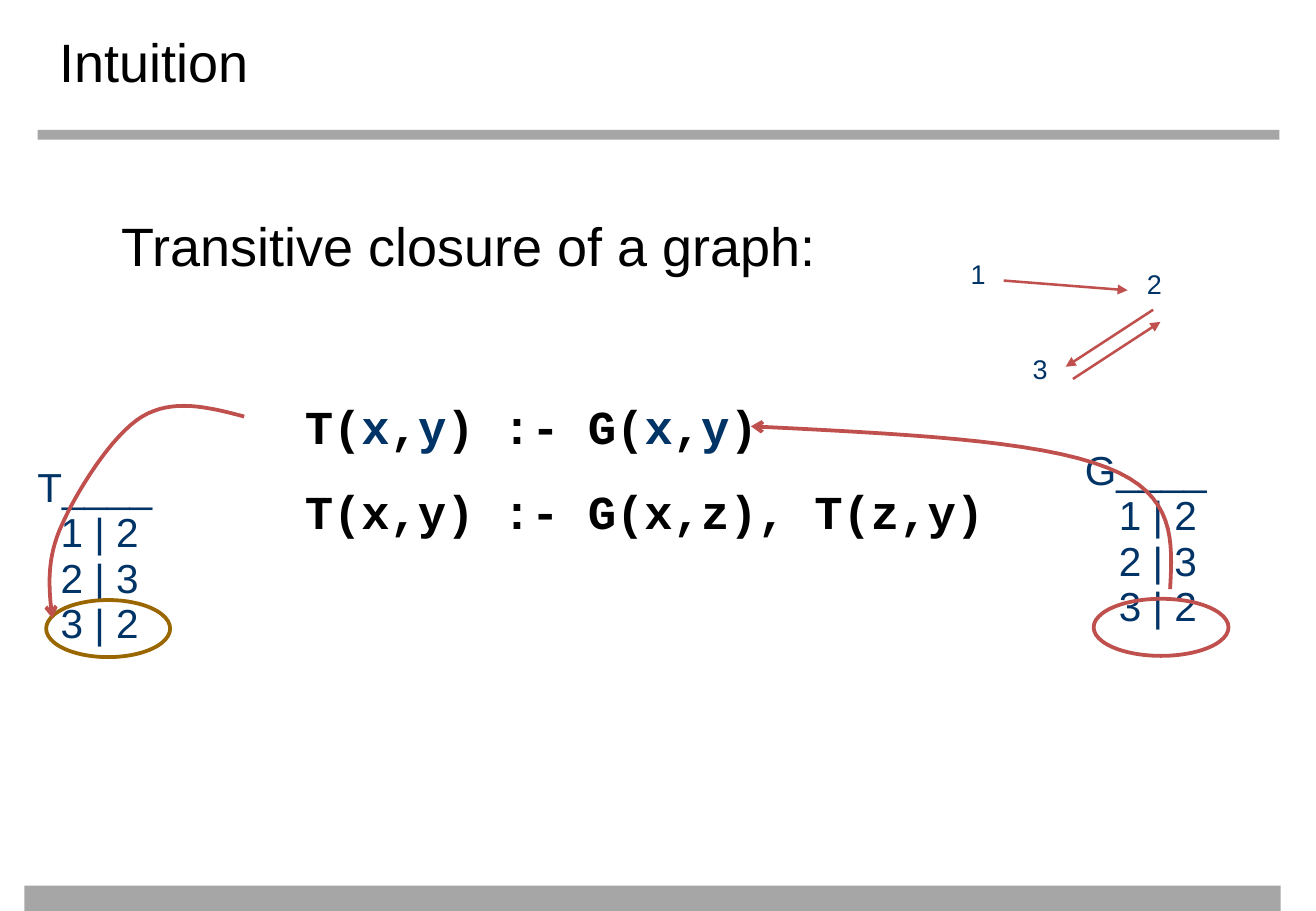
from lxml import etree
from pptx import Presentation
from pptx.dml.color import RGBColor
from pptx.enum.shapes import MSO_CONNECTOR as Conn, MSO_SHAPE as Shape
from pptx.enum.text import MSO_ANCHOR as Anchor
from pptx.oxml.ns import qn
from pptx.util import Inches, Pt

COLORS = {"text": "000000", "navy": "003366", "red": "C0504D",
          "gold": "996600", "gray": "A6A6A6"}


def color(name):
    return RGBColor.from_string(COLORS[name])


def style(run, size, tint="text", face="Arial", bold=False):
    font = run.font
    font.size, font.name, font.bold = Pt(size), face, bold
    font.color.rgb = color(tint)


def add_text(slide, box, lines, size, tint="text", wrap=True):
    frame = slide.shapes.add_textbox(*map(Inches, box)).text_frame
    frame.word_wrap = wrap
    frame.text = "\n".join(lines)
    for para in frame.paragraphs:
        for run in para.runs:
            style(run, size, tint)
    return frame


def set_line(shape, tint, width, tip=None):
    line = shape.line
    line.color.rgb, line.width = color(tint), Pt(width)
    if tip:
        etree.SubElement(line._get_or_add_ln(), qn("a:tailEnd"), type=tip)


def add_bar(slide, box):
    bar = slide.shapes.add_shape(Shape.RECTANGLE, *map(Inches, box))
    bar.shadow.inherit = False
    bar.fill.solid()
    bar.fill.fore_color.rgb = color("gray")
    bar.line.fill.background()


def add_ring(slide, box, tint):
    ring = slide.shapes.add_shape(Shape.OVAL, *map(Inches, box))
    ring.shadow.inherit = False
    ring.fill.background()
    set_line(ring, tint, 2.25)


def add_arrow(slide, start, end):
    arrow = slide.shapes.add_connector(Conn.STRAIGHT, *map(Inches, start + end))
    set_line(arrow, "red", 1.5, "triangle")
    etree.SubElement(arrow._element.spPr, qn("a:effectLst"))


def add_curve(slide, knots, steps=16):
    """Draw a chain of cubic curves; each takes three more knots."""
    dots = []
    for i in range(0, len(knots) - 1, 3):
        for k in range(1, steps + 1):
            t = k / steps
            mix = ((1 - t) ** 3, 3 * t * (1 - t) ** 2, 3 * t * t * (1 - t), t ** 3)
            dots.append([Inches(sum(m * p[axis] for m, p in zip(mix, knots[i:i + 4])))
                         for axis in (0, 1)])
    pen = slide.shapes.build_freeform(*map(Inches, knots[0]))
    pen.add_line_segments(dots, close=False)
    curve = pen.convert_to_shape()
    curve.shadow.inherit = False
    curve.fill.background()
    set_line(curve, "red", 2.25, "arrow")


def add_frame(slide, box):
    """Title and the two gray bars."""
    x, y, w, h = box
    add_bar(slide, (x + 0.2, y + h - 0.21, w - 0.49, 0.21))
    add_bar(slide, (x + 0.31, y + 1.07, w - 0.61, 0.08))
    frame = add_text(slide, (x + 0.42, y + 0.25, 10, 0.56), ["Intuition"], 32)
    frame.vertical_anchor = Anchor.MIDDLE
    frame.margin_left = frame.margin_right = Inches(0.07)
    frame.margin_top = frame.margin_bottom = Inches(0.03)
    frame.paragraphs[0].line_spacing = 0.92


def add_rules(slide, box):
    """Heading and the two rules, with the variables of the first in navy."""
    x, y, w, h = box
    add_text(slide, (x, y, w, 0.65), ["Transitive closure of a graph:"], 32)
    area = (x + 1.51, y + 1.52, w - 1.51, h - 1.52)
    frame = add_text(slide, area, ["", "T(x,y) :- G(x,z), T(z,y)"], 28)
    first, second = frame.paragraphs
    for part in ("T(", "x", ",", "y", ") :- G(", "x", ",", "y", ")"):
        run = first.add_run()
        run.text = part
        style(run, 28, "navy" if part in "xy" else "text", "Courier New", True)
    style(second.runs[0], 28, face="Courier New", bold=True)
    second.space_before = Pt(17)


def add_pairs(slide, box, name, indent):
    """Relation name over its rows."""
    lines = [name + "____", "1 | 2", "2 | 3", "3 | 2"]
    frame = add_text(slide, box, lines, 24, "navy")
    for i, para in enumerate(frame.paragraphs):
        para.line_spacing = 0.9
        if i:
            para.space_before = Pt(1)
            para._p.get_or_add_pPr().set("marL", str(Inches(indent)))


def add_graph(slide, box):
    """Three nodes and three edges."""
    x, y = box[:2]
    for name, dx, dy in (("1", 0, 0), ("2", 1.45, 0.08), ("3", 0.51, 0.78)):
        frame = add_text(slide, (x + dx, y + dy, 0.33, 0.35), [name], 16, "navy", False)
        frame.paragraphs[0].line_spacing = 0.9
    for x1, y1, x2, y2 in ((0.37, 0.21, 1.39, 0.29), (1.6, 0.45, 0.88, 0.92),
                           (0.94, 1.02, 1.66, 0.55)):
        add_arrow(slide, (x + x1, y + y1), (x + x2, y + y2))


def main():
    deck = Presentation()
    deck.slide_width, deck.slide_height = Inches(10.83), Inches(7.5)
    slide = deck.slides.add_slide(deck.slide_layouts[6])
    add_frame(slide, (0, 0, 10.83, 7.5))
    add_rules(slide, (0.9, 1.7, 9.22, 2.9))
    add_pairs(slide, (8.83, 3.66, 1.39, 1.55), "G", 0.28)
    add_pairs(slide, (0.21, 3.8, 1.39, 1.55), "T", 0.19)
    # Marked rows and the flow from G to the rule to T
    add_ring(slide, (9, 4.93, 1.11, 0.47), "red")
    add_ring(slide, (0.38, 4.94, 1.02, 0.47), "gold")
    add_curve(slide, [(9.63, 4.85), (9.65, 4.46), (9.68, 4.07), (9.11, 3.85),
                      (8.54, 3.62), (7.36, 3.57), (6.18, 3.51)])
    add_curve(slide, [(2.01, 3.43), (1.71, 3.35), (1.42, 3.28), (1.17, 3.43),
                      (0.92, 3.58), (0.63, 4.05), (0.51, 4.32),
                      (0.38, 4.6), (0.4, 4.84), (0.43, 5.09)])
    add_graph(slide, (7.89, 2.1, 1.78, 1.13))
    deck.save("out.pptx")


if __name__ == "__main__":
    main()
